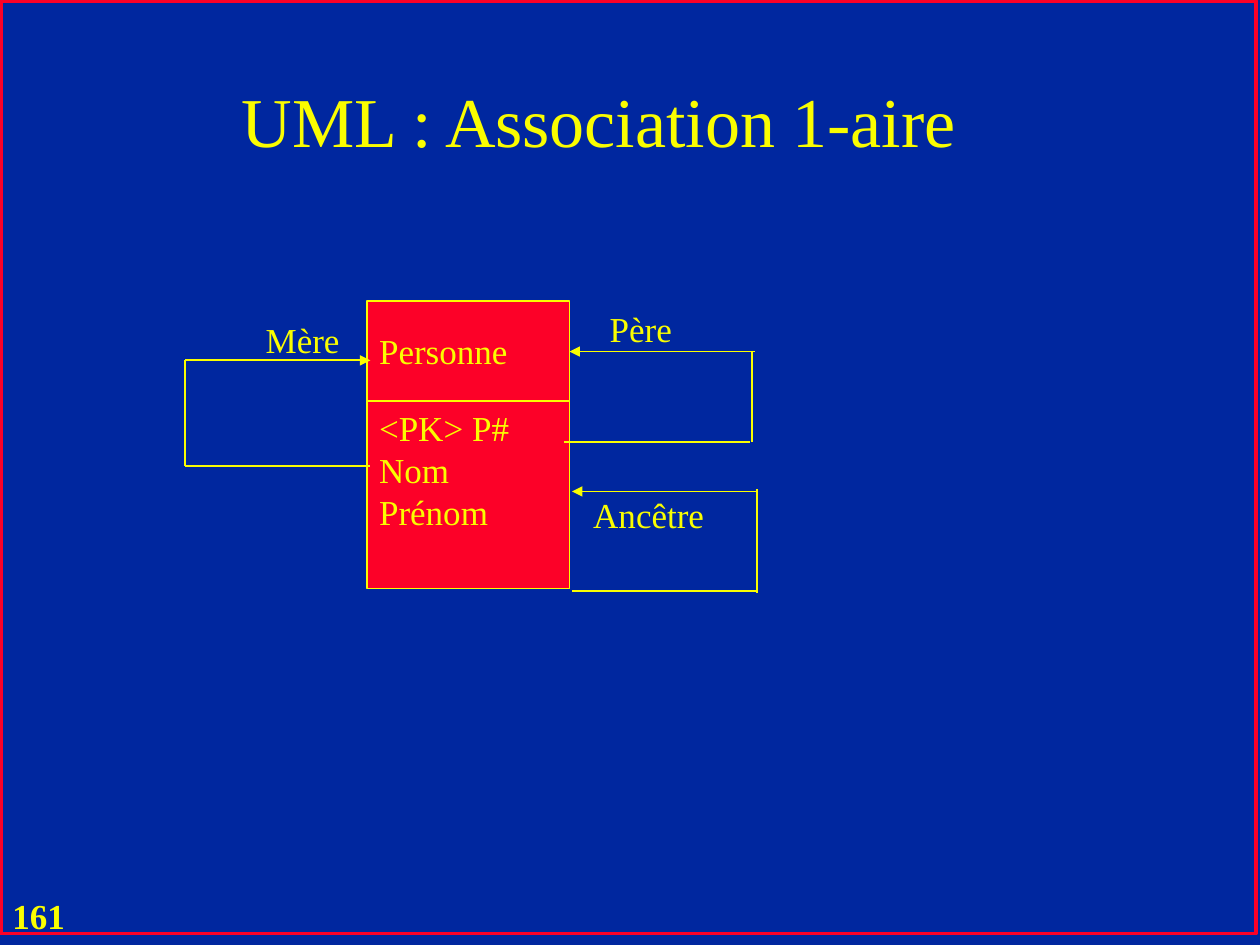
import dataclasses

import pptx
import pptx.dml.color
import pptx.enum.shapes
import pptx.enum.text
import pptx.oxml.ns
import pptx.util
from lxml import etree

Inches = pptx.util.Inches
Anchor = pptx.enum.text.MSO_ANCHOR


@dataclasses.dataclass(frozen=True)
class Theme:
    background: str = "00279F"
    accent: str = "FC0128"
    ink: str = "FAFD00"
    font: str = "Times New Roman"
    title_size: int = 40
    body_size: int = 20
    line_width: int = 1
    frame_width: int = 2


THEME = Theme()


def color(value):
    return pptx.dml.color.RGBColor.from_string(value)


def place(shape, box):
    shape.left, shape.top, shape.width, shape.height = map(Inches, box)


def write(shape, lines, size=THEME.body_size, bold=False, anchor=Anchor.TOP, wrap=True):
    frame = shape.text_frame
    frame.word_wrap = wrap
    frame.vertical_anchor = anchor
    for index, line in enumerate(lines):
        para = frame.add_paragraph() if index else frame.paragraphs[0]
        para.alignment = pptx.enum.text.PP_ALIGN.LEFT
        span = para.add_run()
        span.text = line
        span.font.name = THEME.font
        span.font.size = pptx.util.Pt(size)
        span.font.bold = bold
        span.font.color.rgb = color(THEME.ink)


def add_rect(page, box, line, width, fill=None):
    rect = page.shapes.add_shape(
        pptx.enum.shapes.MSO_SHAPE.RECTANGLE, *map(Inches, box)
    )
    rect.shadow.inherit = False
    if fill:
        rect.fill.solid()
        rect.fill.fore_color.rgb = color(fill)
    else:
        rect.fill.background()
    rect.line.color.rgb = color(line)
    rect.line.width = pptx.util.Pt(width)
    return rect


def add_text(page, box, text, bold=False, wrap=True):
    label = page.shapes.add_textbox(*map(Inches, box))
    write(label, [text], bold=bold, wrap=wrap)


def add_line(page, start, end, arrow=False):
    line = page.shapes.add_connector(
        pptx.enum.shapes.MSO_CONNECTOR.STRAIGHT, *map(Inches, (*start, *end))
    )
    line.line.color.rgb = color(THEME.ink)
    line.line.width = pptx.util.Pt(THEME.line_width)
    qn = pptx.oxml.ns.qn
    if arrow:
        tail = etree.SubElement(line.line._get_or_add_ln(), qn("a:tailEnd"))
        tail.set("type", "triangle")
    etree.SubElement(line._element.spPr, qn("a:effectLst"))


def add_frame(page, box):
    add_rect(page, box, THEME.accent, THEME.frame_width)


def add_title(page, box, text):
    title = page.shapes.title
    place(title, box)
    write(title, [text], size=THEME.title_size, anchor=Anchor.MIDDLE)


def add_entity(page, box, name, fields, header=0.79):
    left, top, width, height = box
    parts = (
        (top, header, [name], Anchor.MIDDLE),
        (top + header, height - header, fields, Anchor.TOP),
    )
    for part_top, part_height, lines, anchor in parts:
        part_box = (left, part_top, width, part_height)
        rect = add_rect(page, part_box, THEME.ink, THEME.line_width, THEME.accent)
        write(rect, lines, anchor=anchor)


def add_loop(page, box, near_right=False, skew=0, overhang=0):
    left, top, width, height = box
    right, bottom = left + width, top + height
    near, far = (right, left) if near_right else (left, right)
    add_line(page, (far + skew, top), (near + skew, top), arrow=True)
    add_line(page, (far, top - overhang), (far, bottom + overhang))
    add_line(page, (far - skew, bottom), (near - skew, bottom))


def build_slide(deck):
    page = deck.slides.add_slide(deck.slide_layouts[5])
    page.background.fill.solid()
    page.background.fill.fore_color.rgb = color(THEME.background)

    add_text(page, (0, 7.05, 0.69, 0.43), "161", bold=True, wrap=False)
    add_frame(page, (0.01, 0.01, 9.96, 7.4))
    add_title(page, (1.82, 0.32, 6.49, 1.25), "UML : Association 1-aire")
    add_entity(
        page, (2.91, 2.39, 1.61, 2.28), "Personne", ["<PK> P#", "Nom", "Prénom"]
    )

    reach = 1.47
    add_loop(page, (1.47, 2.86, reach, 0.84), near_right=True)
    add_loop(page, (4.5, 2.79, reach, 0.72), skew=0.02)
    add_loop(page, (4.54, 3.9, reach, 0.79), overhang=0.02)

    add_text(page, (2.01, 2.48, 0.82, 0.43), "Mère")
    add_text(page, (4.74, 2.39, 0.82, 0.43), "Père")
    add_text(page, (4.61, 3.87, 1.6, 0.43), "Ancêtre")


def main():
    deck = pptx.Presentation()
    deck.slide_width, deck.slide_height = Inches(10), Inches(7.5)
    build_slide(deck)
    deck.save("out.pptx")


if __name__ == "__main__":
    main()
